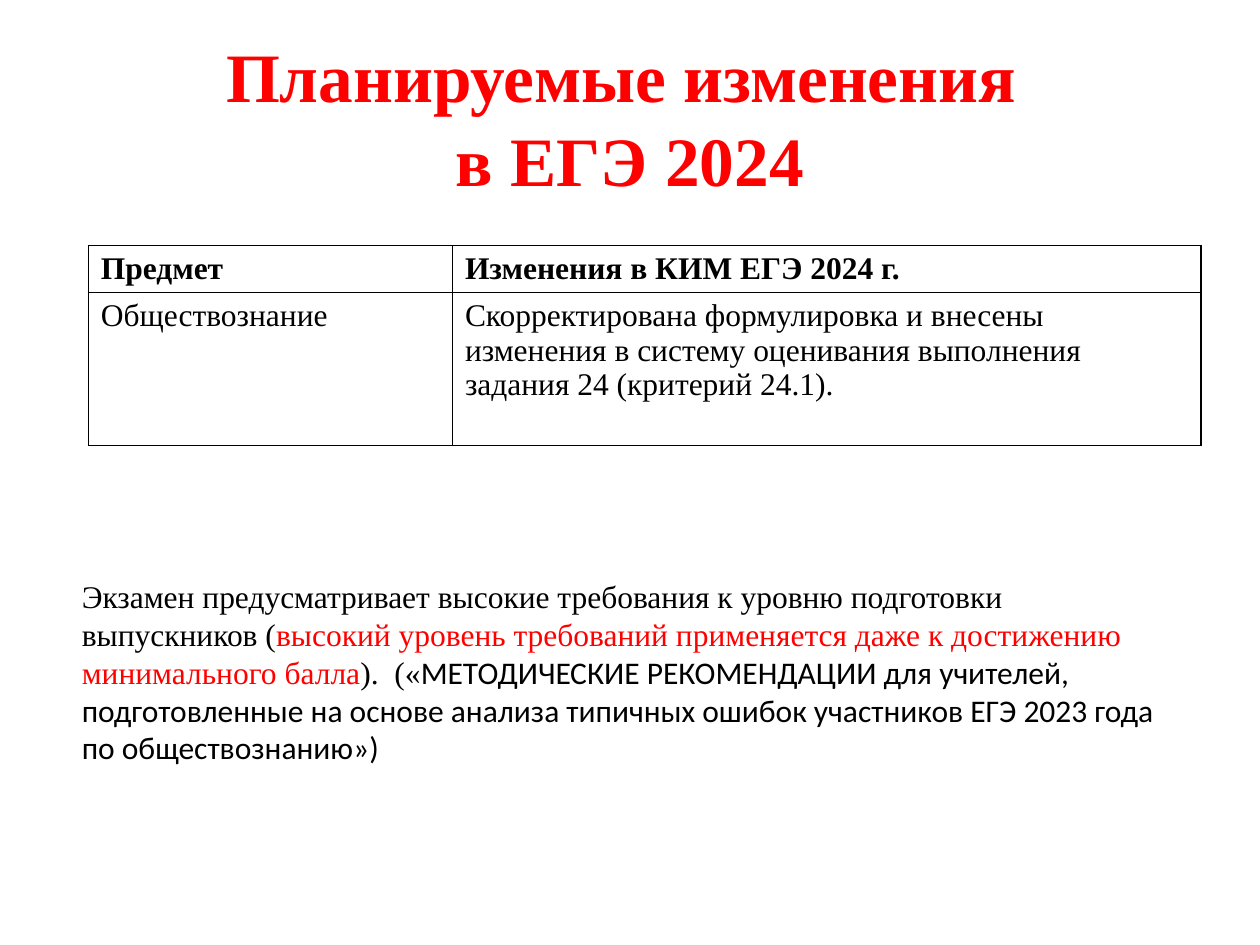
from lxml import etree
from pptx import Presentation
from pptx import util as u
from pptx.dml import color
from pptx.enum import text
from pptx.oxml import ns

SERIF, SANS = "Times New Roman", "Calibri"
BLACK, RED, WHITE = "000000", "FF0000", "FFFFFF"


def rgb(value):
    return color.RGBColor.from_string(value)


class SlideStyle:
    """Holds the slide and draws its elements in one style."""

    def __init__(self, slide, size=18):
        self.slide = slide
        self.size = size

    def format_run(self, run, font=SERIF, tint=BLACK, bold=False, size=None):
        run.font.name = font
        run.font.size = u.Pt(size or self.size)
        run.font.bold = bold
        run.font.color.rgb = rgb(tint)

    def box(self, left, top, width, height, anchor):
        frame = self.slide.shapes.add_textbox(
            u.Cm(left), u.Cm(top), u.Cm(width), u.Cm(height)).text_frame
        frame.word_wrap = True
        frame.vertical_anchor = anchor
        return frame

    def title(self, wording, place):
        frame = self.box(*place, text.MSO_ANCHOR.MIDDLE)
        heading = frame.paragraphs[0]
        heading.text = wording
        heading.alignment = text.PP_ALIGN.CENTER
        heading.line_spacing = u.Pt(48)
        for run in heading.runs:
            self.format_run(run, tint=RED, bold=True, size=39.6)

    def passage(self, parts, place):
        frame = self.box(*place, text.MSO_ANCHOR.TOP)
        frame.auto_size = text.MSO_AUTO_SIZE.SHAPE_TO_FIT_TEXT
        passage = frame.paragraphs[0]
        passage.line_spacing = u.Pt(21.6)
        for wording, font, tint in parts:
            run = passage.add_run()
            run.text = wording
            self.format_run(run, font, tint)

    def border(self, cell):
        properties = cell._tc.get_or_add_tcPr()
        for side in ("a:lnL", "a:lnR", "a:lnT", "a:lnB"):
            line = etree.SubElement(properties, ns.qn(side), w=str(u.Pt(1)))
            fill = etree.SubElement(line, ns.qn("a:solidFill"))
            etree.SubElement(fill, ns.qn("a:srgbClr"), val=BLACK)

    def table(self, rows, left, top, widths, heights):
        grid = self.slide.shapes.add_table(
            len(rows), len(widths), u.Cm(left), u.Cm(top),
            u.Cm(sum(widths)), u.Cm(sum(heights))).table
        for column, width in zip(grid.columns, widths):
            column.width = u.Cm(width)
        for i, (row, height) in enumerate(zip(rows, heights)):
            grid.rows[i].height = u.Cm(height)
            for j, wording in enumerate(row):
                cell = grid.cell(i, j)
                self.border(cell)
                cell.fill.solid()
                cell.fill.fore_color.rgb = rgb(WHITE)
                entry = cell.text_frame.paragraphs[0]
                entry.text = wording
                entry.line_spacing = u.Pt(19.7)
                self.format_run(entry.runs[0], bold=i == 0)


def main():
    deck = Presentation()
    deck.slide_width, deck.slide_height = u.Cm(25.4), u.Cm(19.05)
    style = SlideStyle(deck.slides.add_slide(deck.slide_layouts[6]))
    style.title("Планируемые изменения \vв ЕГЭ 2024", (1.27, 0.76, 22.86, 3.18))
    style.table(
        [("Предмет", "Изменения в КИМ ЕГЭ 2024 г."),
         ("Обществознание",
          "Скорректирована формулировка и внесены изменения в систему "
          "оценивания выполнения задания 24 (критерий 24.1).")],
        1.78, 4.95, widths=(7.34, 15.09), heights=(0.95, 3.08))
    style.passage(
        [("Экзамен предусматривает высокие требования к уровню подготовки "
          "выпускников (", SERIF, BLACK),
         ("высокий уровень требований применяется даже к достижению "
          "минимального балла", SERIF, RED),
         (").  («", SERIF, BLACK),
         ("МЕТОДИЧЕСКИЕ РЕКОМЕНДАЦИИ для учителей, подготовленные на основе "
          "анализа типичных ошибок участников ЕГЭ 2023 года по "
          "обществознанию»)", SANS, BLACK)],
        (1.4, 11.51, 22.63, 4.11))
    deck.save("out.pptx")


if __name__ == "__main__":
    main()
